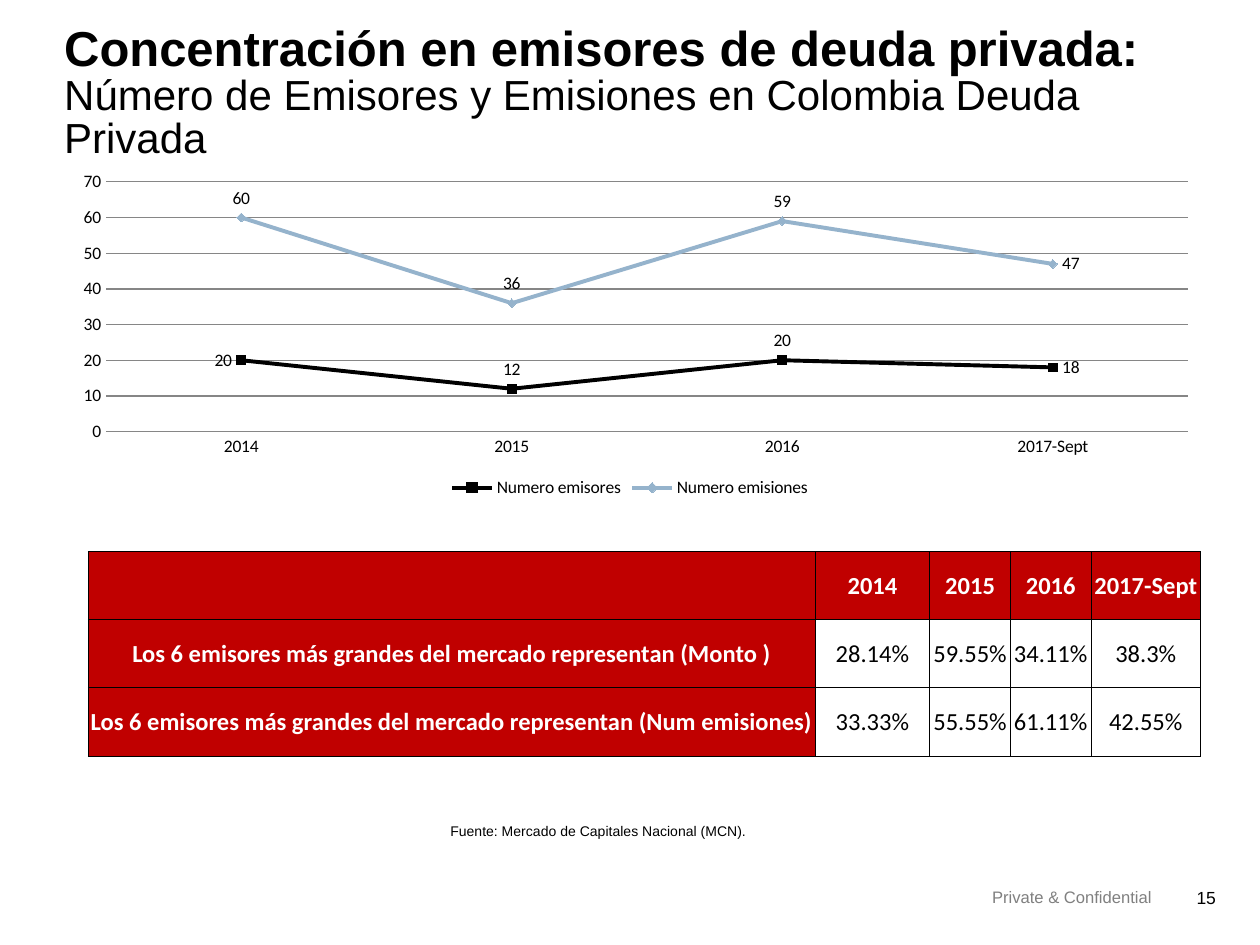
from lxml import etree
from pptx import Presentation
from pptx.chart.data import CategoryChartData
from pptx.dml.color import RGBColor
from pptx.enum.chart import (XL_CHART_TYPE, XL_LABEL_POSITION, XL_LEGEND_POSITION,
                             XL_MARKER_STYLE, XL_TICK_MARK)
from pptx.enum.text import MSO_ANCHOR, PP_ALIGN
from pptx.oxml import parse_xml
from pptx.oxml.ns import nsdecls, qn
from pptx.util import Inches, Pt

COLORS = {"black": "000000", "white": "FFFFFF", "red": "C00000",
          "blue": "95B3CC", "gray": "808080", "grid": "868686"}

TITLE = "Concentración en emisores de deuda privada:"
SUBTITLE = "Número de Emisores y Emisiones en Colombia Deuda Privada"
SOURCE = "Fuente: Mercado de Capitales Nacional (MCN)."

PERIODS = ["2014", "2015", "2016", "2017-Sept"]
LEFT, ABOVE, RIGHT = (XL_LABEL_POSITION.LEFT, XL_LABEL_POSITION.ABOVE,
                      XL_LABEL_POSITION.RIGHT)
SERIES = [
    {"name": "Numero emisores", "values": [20, 12, 20, 18], "color": "black",
     "marker": XL_MARKER_STYLE.SQUARE, "labels": [LEFT, ABOVE, ABOVE, RIGHT]},
    {"name": "Numero emisiones", "values": [60, 36, 59, 47], "color": "blue",
     "marker": XL_MARKER_STYLE.DIAMOND, "labels": [ABOVE, ABOVE, ABOVE, RIGHT]},
]
PLOT_AREA = {"x": 0.04, "y": 0.05, "w": 0.95, "h": 0.74}

TABLE_ROWS = [
    ["", *PERIODS],
    ["Los 6 emisores más grandes del mercado representan (Monto )",
     "28.14%", "59.55%", "34.11%", "38.3%"],
    ["Los 6 emisores más grandes del mercado representan (Num emisiones)",
     "33.33%", "55.55%", "61.11%", "42.55%"],
]
COLUMN_WIDTHS = [5.77, 0.91, 0.64, 0.64, 0.87]
ROW_HEIGHT = 0.54


def rgb(name):
    return RGBColor.from_string(COLORS[name])


def add_run(paragraph, text, size=10, color="black", bold=False, font="Arial"):
    run = paragraph.add_run()
    run.text = text
    run.font.name = font
    run.font.size = Pt(size)
    run.font.bold = bold
    run.font.color.rgb = rgb(color)


def add_text(slide, text, box, align=PP_ALIGN.LEFT, anchor=MSO_ANCHOR.TOP,
             bottom=0, line_spacing=None, **run_format):
    """Add a text box without insets and return its first paragraph."""
    frame = slide.shapes.add_textbox(*map(Inches, box)).text_frame
    frame.word_wrap = True
    frame.vertical_anchor = anchor
    frame.margin_left = frame.margin_top = frame.margin_right = 0
    frame.margin_bottom = Inches(bottom)
    paragraph = frame.paragraphs[0]
    paragraph.alignment = align
    paragraph.line_spacing = line_spacing
    add_run(paragraph, text, **run_format)
    return paragraph


def set_plot_area(chart):
    """Fix the inner plot area as fractions of the chart."""
    plot_area = chart.plots[0]._element.getparent()
    for layout in plot_area.findall(qn("c:layout")):
        plot_area.remove(layout)
    sizes = "".join(f'<c:{key} val="{value}"/>' for key, value in PLOT_AREA.items())
    plot_area.insert(0, parse_xml(
        f'<c:layout {nsdecls("c")}><c:manualLayout><c:layoutTarget val="inner"/>'
        f'<c:xMode val="edge"/><c:yMode val="edge"/>{sizes}'
        '</c:manualLayout></c:layout>'))


def add_issuer_chart(slide):
    data = CategoryChartData()
    data.categories = PERIODS
    for item in SERIES:
        data.add_series(item["name"], item["values"])
    chart = slide.shapes.add_chart(
        XL_CHART_TYPE.LINE_MARKERS, Inches(0.48), Inches(1.31),
        Inches(9.04), Inches(2.68), data).chart
    chart.font.name = "Calibri"
    chart.font.size = Pt(10)
    chart.font.color.rgb = rgb("black")
    chart.has_title = False
    chart.has_legend = True
    chart.legend.position = XL_LEGEND_POSITION.BOTTOM
    chart.legend.include_in_layout = False
    set_plot_area(chart)

    for axis in (chart.category_axis, chart.value_axis):
        axis.major_tick_mark = axis.minor_tick_mark = XL_TICK_MARK.NONE
    chart.category_axis.format.line.color.rgb = rgb("grid")
    value_axis = chart.value_axis
    value_axis.minimum_scale, value_axis.maximum_scale = 0, 70
    value_axis.major_unit = 10
    value_axis.format.line.fill.background()
    value_axis.has_major_gridlines = True
    value_axis.major_gridlines.format.line.color.rgb = rgb("grid")

    plot = chart.plots[0]
    plot.vary_by_categories = False
    for series, item in zip(plot.series, SERIES):
        color = rgb(item["color"])
        series.smooth = False
        series.format.line.color.rgb = color
        series.format.line.width = Pt(2.25)
        series.marker.style = item["marker"]
        series.marker.size = 5
        series.marker.format.fill.solid()
        series.marker.format.fill.fore_color.rgb = color
        series.marker.format.line.color.rgb = color
        series.data_labels.show_value = True
        for index, position in enumerate(item["labels"]):
            series.points[index].data_label.position = position


def add_borders(cell):
    properties = cell._tc.get_or_add_tcPr()
    for index, side in enumerate(("lnL", "lnR", "lnT", "lnB")):
        line = etree.Element(qn(f"a:{side}"), w=str(Pt(0.5)))
        fill = etree.SubElement(line, qn("a:solidFill"))
        etree.SubElement(fill, qn("a:srgbClr"), val=COLORS["black"])
        properties.insert(index, line)


def add_share_table(slide):
    table = slide.shapes.add_table(
        len(TABLE_ROWS), len(COLUMN_WIDTHS), Inches(0.7), Inches(4.38),
        Inches(sum(COLUMN_WIDTHS)), Inches(ROW_HEIGHT * len(TABLE_ROWS))).table
    for column, width in zip(table.columns, COLUMN_WIDTHS):
        column.width = Inches(width)
    for row_index, texts in enumerate(TABLE_ROWS):
        table.rows[row_index].height = Inches(ROW_HEIGHT)
        for column_index, text in enumerate(texts):
            is_header = row_index == 0 or column_index == 0
            cell = table.cell(row_index, column_index)
            cell.fill.solid()
            cell.fill.fore_color.rgb = rgb("red" if is_header else "white")
            cell.vertical_anchor = MSO_ANCHOR.MIDDLE
            cell.margin_left = cell.margin_right = cell.margin_top = Inches(0.01)
            cell.margin_bottom = 0
            add_borders(cell)
            paragraph = cell.text_frame.paragraphs[0]
            paragraph.alignment = PP_ALIGN.CENTER
            if text:
                add_run(paragraph, text, size=14, font="Calibri", bold=is_header,
                        color="white" if is_header else "black")


def main():
    presentation = Presentation()
    presentation.slide_width = Inches(10)
    presentation.slide_height = Inches(7.5)
    slide = presentation.slides.add_slide(presentation.slide_layouts[6])

    title = add_text(slide, TITLE, (0.51, 0.21, 9, 1.25), line_spacing=0.85,
                     size=28, bold=True)
    title.add_line_break()
    add_run(title, SUBTITLE, size=24)
    add_issuer_chart(slide)
    add_share_table(slide)
    add_text(slide, SOURCE, (0, 6.51, 9.5, 0.25), align=PP_ALIGN.CENTER,
             anchor=MSO_ANCHOR.BOTTOM, bottom=0.1, line_spacing=1.1, size=8)
    add_text(slide, "Private & Confidential", (5.94, 7.04, 3.2, 0.24),
             align=PP_ALIGN.RIGHT, size=9.5, color="gray")
    add_text(slide, "15", (9.42, 7.04, 0.23, 0.28), align=PP_ALIGN.RIGHT)
    presentation.save("out.pptx")


if __name__ == "__main__":
    main()
